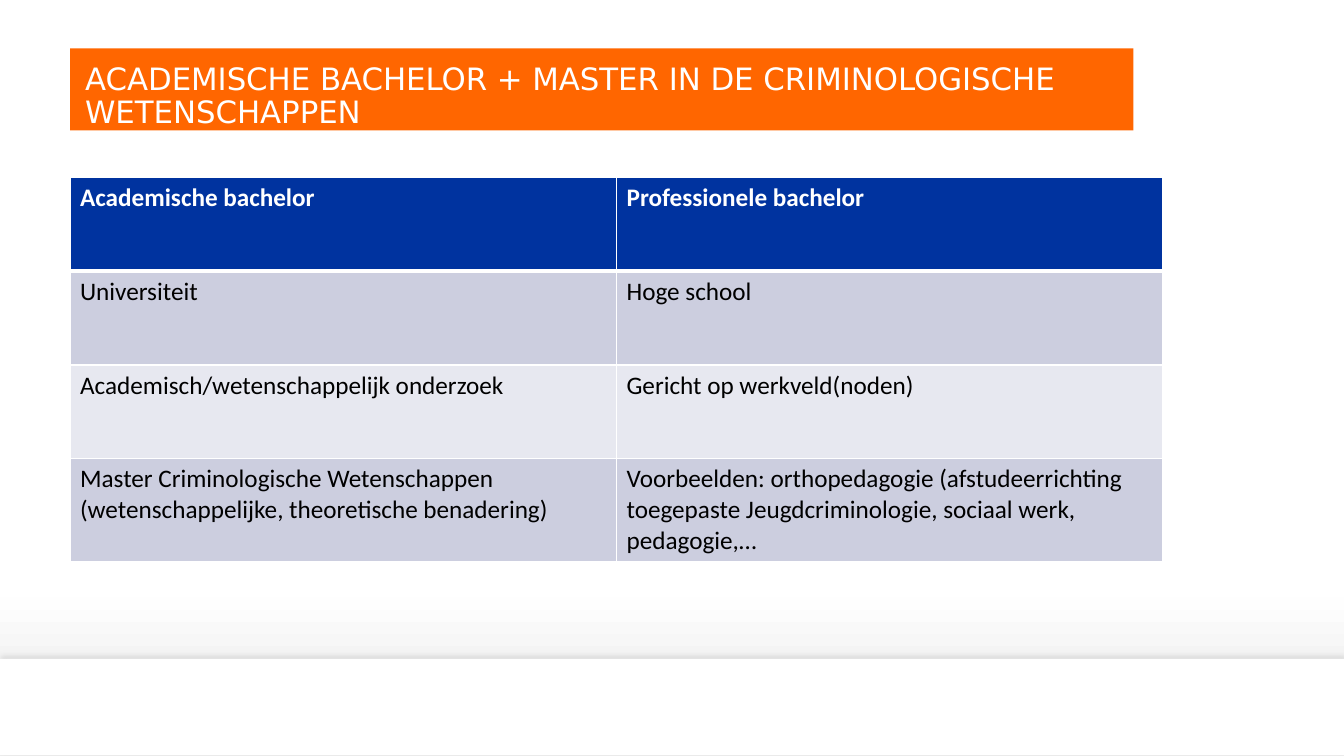
"""Build a slide that compares two kinds of bachelor."""
from lxml.etree import SubElement
from pptx import Presentation
from pptx.dml.color import RGBColor
from pptx.enum.shapes import MSO_SHAPE
from pptx.enum.text import MSO_ANCHOR, MSO_AUTO_SIZE, PP_ALIGN
from pptx.oxml import parse_xml
from pptx.oxml.ns import nsdecls, qn
from pptx.util import Pt

WHITE = RGBColor(0xFF, 0xFF, 0xFF)
BLACK = RGBColor(0, 0, 0)
ORANGE = RGBColor(0xFF, 0x66, 0x00)
BLUE = RGBColor(0x00, 0x33, 0x9F)
LILAC = RGBColor(0xCC, 0xCE, 0xDF)
PALE = RGBColor(0xE7, 0xE8, 0xF0)
NEAR = RGBColor(0xFE, 0xFE, 0xFE)
GREY = RGBColor(0xED, 0xED, 0xED)

ROWS = [
    ("Academische bachelor", "Professionele bachelor"),
    ("Universiteit", "Hoge school"),
    ("Academisch/wetenschappelijk onderzoek", "Gericht op werkveld(noden)"),
    ("Master Criminologische Wetenschappen (wetenschappelijke, theoretische benadering)",
     "Voorbeelden: orthopedagogie (afstudeerrichting toegepaste Jeugdcriminologie, "
     "sociaal werk, pedagogie,…"),
]


def write(frame, text, font="Calibri", size=18, color=BLACK, bold=False, space=1.0):
    """Put formatted text in a frame and return its paragraph."""
    para = frame.paragraphs[0]
    para.text = text
    para.alignment = PP_ALIGN.LEFT
    para.line_spacing = space
    for run in para.runs:
        run.font.name = font
        run.font.size = Pt(size)
        run.font.bold = bold
        run.font.color.rgb = color
    return para


class Slide:
    """Hold the slide and draw its parts."""

    def __init__(self, deck):
        """Add a slide that has only a title."""
        self.slide = deck.slides.add_slide(deck.slide_layouts[5])
        self.shapes = self.slide.shapes

    def backdrop(self, stops, angle):
        """Fill the background with a gradient."""
        fill = self.slide.background.fill
        fill.gradient()
        fill.gradient_angle = angle
        tree = self.slide.background._cSld.find(".//" + qn("a:gsLst"))
        for child in list(tree):
            tree.remove(child)
        for place, color in stops:
            stop = SubElement(tree, qn("a:gs"), pos=str(place * 1000))
            SubElement(stop, qn("a:srgbClr"), val=str(color))

    def band(self, left, top, width, height):
        """Draw a white band with a soft shadow above it."""
        box = self.shapes.add_shape(
            MSO_SHAPE.RECTANGLE, Pt(left), Pt(top), Pt(width), Pt(height))
        box.shadow.inherit = False
        box.fill.solid()
        box.fill.fore_color.rgb = WHITE
        box.line.fill.background()
        glow = box._element.spPr.find(qn("a:effectLst"))
        glow.append(parse_xml(
            f'<a:outerShdw {nsdecls("a")} blurRad="{Pt(4)}" dist="{Pt(3)}" '
            'dir="16200000" rotWithShape="0"><a:srgbClr val="000000">'
            '<a:alpha val="10000"/></a:srgbClr></a:outerShdw>'))

    def title(self, text, left, top, width, height):
        """Place the title on an orange bar."""
        box = self.shapes.title
        box.left, box.top = Pt(left), Pt(top)
        box.width, box.height = Pt(width), Pt(height)
        box.fill.solid()
        box.fill.fore_color.rgb = ORANGE
        frame = box.text_frame
        frame.auto_size = MSO_AUTO_SIZE.NONE
        frame.word_wrap = True
        frame.vertical_anchor = MSO_ANCHOR.BOTTOM
        frame.margin_left = frame.margin_bottom = 0
        frame.margin_top, frame.margin_right = Pt(3), Pt(11.5)
        para = write(frame, text, font="DejaVu Sans", size=22, color=WHITE, space=0.9)
        para._p.get_or_add_pPr().set("marL", str(Pt(10.8)))

    def edge(self, cell, **widths):
        """Draw white cell borders of the given widths."""
        for spot, (side, width) in enumerate(widths.items()):
            cell._tc.get_or_add_tcPr().insert(spot, parse_xml(
                f'<a:ln{side} {nsdecls("a")} w="{Pt(width)}"><a:solidFill>'
                f'<a:srgbClr val="{WHITE}"/></a:solidFill></a:ln{side}>'))

    def table(self, rows, left, top, width, height):
        """Add a table with a dark head and banded rows."""
        grid = self.shapes.add_table(
            len(rows), len(rows[0]), Pt(left), Pt(top), Pt(width), Pt(height)).table
        for i, row in enumerate(rows):
            head = i == 0
            shade = BLUE if head else (LILAC if i % 2 else PALE)
            for j, text in enumerate(row):
                cell = grid.cell(i, j)
                cell.fill.solid()
                cell.fill.fore_color.rgb = shade
                write(cell.text_frame, text, color=WHITE if head else BLACK, bold=head)
                self.edge(cell, L=1, R=1, T=3 if i == 1 else 1, B=3 if head else 1)


def main():
    """Build and save the deck."""
    deck = Presentation()
    deck.slide_width, deck.slide_height = Pt(960), Pt(540)
    page = Slide(deck)
    page.backdrop([(0, WHITE), (79, NEAR), (92, GREY)], 270)
    page.band(0, 470.7, 960, 68.6)
    page.title("ACADEMISCHE BACHELOR + MASTER IN DE CRIMINOLOGISCHE \vWETENSCHAPPEN",
               50, 34.5, 759.6, 58.7)
    page.table(ROWS, 50, 126.8, 780.8, 268)
    deck.save("out.pptx")


if __name__ == "__main__":
    main()
